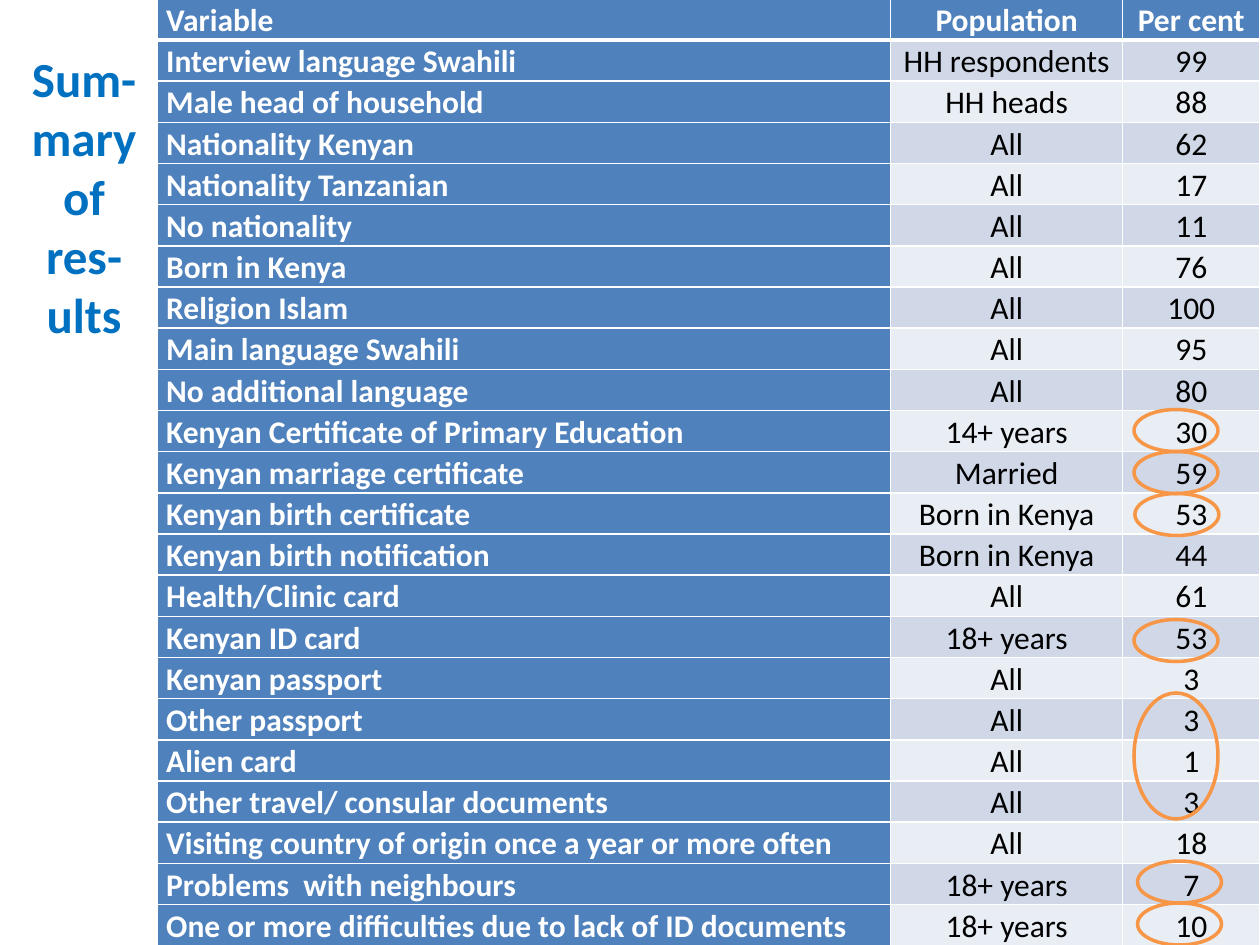
from lxml import etree
from pptx import Presentation
from pptx.dml.color import RGBColor
from pptx.enum.shapes import MSO_SHAPE
from pptx.enum.text import MSO_ANCHOR, MSO_AUTO_SIZE, PP_ALIGN
from pptx.oxml.ns import qn
from pptx.util import Pt

COLORS = {"title": "0070C0", "head": "4F81BD", "dark_band": "D0D8E8",
          "light_band": "E9EDF4", "white": "FFFFFF", "black": "000000",
          "ring": "F79646"}
HEADER = ("Variable", "Population", "Per cent")
RESULTS = [
    ("Interview language Swahili", "HH respondents", 99),
    ("Male head of household", "HH heads", 88),
    ("Nationality Kenyan", "All", 62),
    ("Nationality Tanzanian", "All", 17),
    ("No nationality", "All", 11),
    ("Born in Kenya", "All", 76),
    ("Religion Islam", "All", 100),
    ("Main language Swahili", "All", 95),
    ("No additional language", "All", 80),
    ("Kenyan Certificate of Primary Education", "14+ years", 30),
    ("Kenyan marriage certificate", "Married", 59),
    ("Kenyan birth certificate", "Born in Kenya", 53),
    ("Kenyan birth notification", "Born in Kenya", 44),
    ("Health/Clinic card", "All", 61),
    ("Kenyan ID card", "18+ years", 53),
    ("Kenyan passport", "All", 3),
    ("Other passport", "All", 3),
    ("Alien card", "All", 1),
    ("Other travel/ consular documents", "All", 3),
    ("Visiting country of origin once a year or more often", "All", 18),
    ("Problems  with neighbours", "18+ years", 7),
    ("One or more difficulties due to lack of ID documents", "18+ years", 10),
]
COL_WIDTHS = (419, 132.5, 78.5)
HEADER_HEIGHT, ROW_HEIGHT = 23, 23.53
TOP_ANCHORED = {(8, 1), (9, 1), (22, 1)}
RINGS = [(648, 234, 24), (648, 258, 24), (648.5, 282, 24), (648, 354, 24),
         (648, 396, 72), (650, 492, 24), (650, 516, 24)]
RING_WIDTH = 48


def rgb(name):
    return RGBColor.from_string(COLORS[name])


def write(tf, text, size=18, color="black", bold=False,
          align=PP_ALIGN.CENTER, spacing=None):
    p = tf.paragraphs[0]
    p.alignment = align
    p.line_spacing = spacing
    r = p.add_run()
    r.text = text
    r.font.name = "Calibri"
    r.font.size = Pt(size)
    r.font.bold = bold
    r.font.color.rgb = rgb(color)


def set_borders(cell, widths):
    tc_pr = cell._tc.get_or_add_tcPr()
    for i, (side, width) in enumerate(widths.items()):
        ln = etree.Element(qn(f"a:ln{side}"), w=str(Pt(width)))
        fill = etree.SubElement(ln, qn("a:solidFill"))
        etree.SubElement(fill, qn("a:srgbClr"), val=COLORS["white"])
        tc_pr.insert(i, ln)


def add_title(slide, left, top, width, height):
    sp = slide.shapes.title
    sp.left, sp.top, sp.width, sp.height = map(Pt, (left, top, width, height))
    tf = sp.text_frame
    tf.word_wrap = True
    tf.auto_size = MSO_AUTO_SIZE.NONE
    tf.vertical_anchor = MSO_ANCHOR.MIDDLE
    write(tf, "Sum-mary of res-ults", size=28, color="title", bold=True)


def format_cell(cell, text, row, col):
    heading = row == 0 or col == 0
    band = "dark_band" if row % 2 else "light_band"
    cell.margin_left = cell.margin_right = Pt(5)
    cell.margin_top = cell.margin_bottom = 0
    top = (row, col) in TOP_ANCHORED
    cell.vertical_anchor = MSO_ANCHOR.TOP if top else MSO_ANCHOR.BOTTOM
    cell.fill.solid()
    cell.fill.fore_color.rgb = rgb("head" if heading else band)
    set_borders(cell, {"L": 1, "R": 1, "T": 3 if row == 1 else 1,
                       "B": 3 if row == 0 else 1})
    write(cell.text_frame, text, color="white" if heading else "black",
          bold=heading, spacing=1.07,
          align=PP_ALIGN.CENTER if col else PP_ALIGN.LEFT)


def add_results_table(slide, left, top, width, height):
    rows = [HEADER] + RESULTS
    table = slide.shapes.add_table(len(rows), len(HEADER), Pt(left), Pt(top),
                                   Pt(width), Pt(height)).table
    for column, col_width in zip(table.columns, COL_WIDTHS):
        column.width = Pt(col_width)
    for i, values in enumerate(rows):
        table.rows[i].height = Pt(ROW_HEIGHT if i else HEADER_HEIGHT)
        for j, value in enumerate(values):
            format_cell(table.cell(i, j), str(value), i, j)


def add_ring(slide, left, top, width, height):
    sp = slide.shapes.add_shape(MSO_SHAPE.OVAL, Pt(left), Pt(top),
                                Pt(width), Pt(height))
    sp.shadow.inherit = False
    sp.fill.background()
    sp.line.color.rgb = rgb("ring")
    sp.line.width = Pt(2)


def main():
    prs = Presentation()
    prs.slide_width, prs.slide_height = Pt(720), Pt(540)
    slide = prs.slides.add_slide(prs.slide_layouts[5])
    add_title(slide, 6, 6, 84, 212)
    add_results_table(slide, 90, -0.7, sum(COL_WIDTHS),
                      HEADER_HEIGHT + ROW_HEIGHT * len(RESULTS))
    for left, top, height in RINGS:
        add_ring(slide, left, top, RING_WIDTH, height)
    prs.save("out.pptx")


if __name__ == "__main__":
    main()
